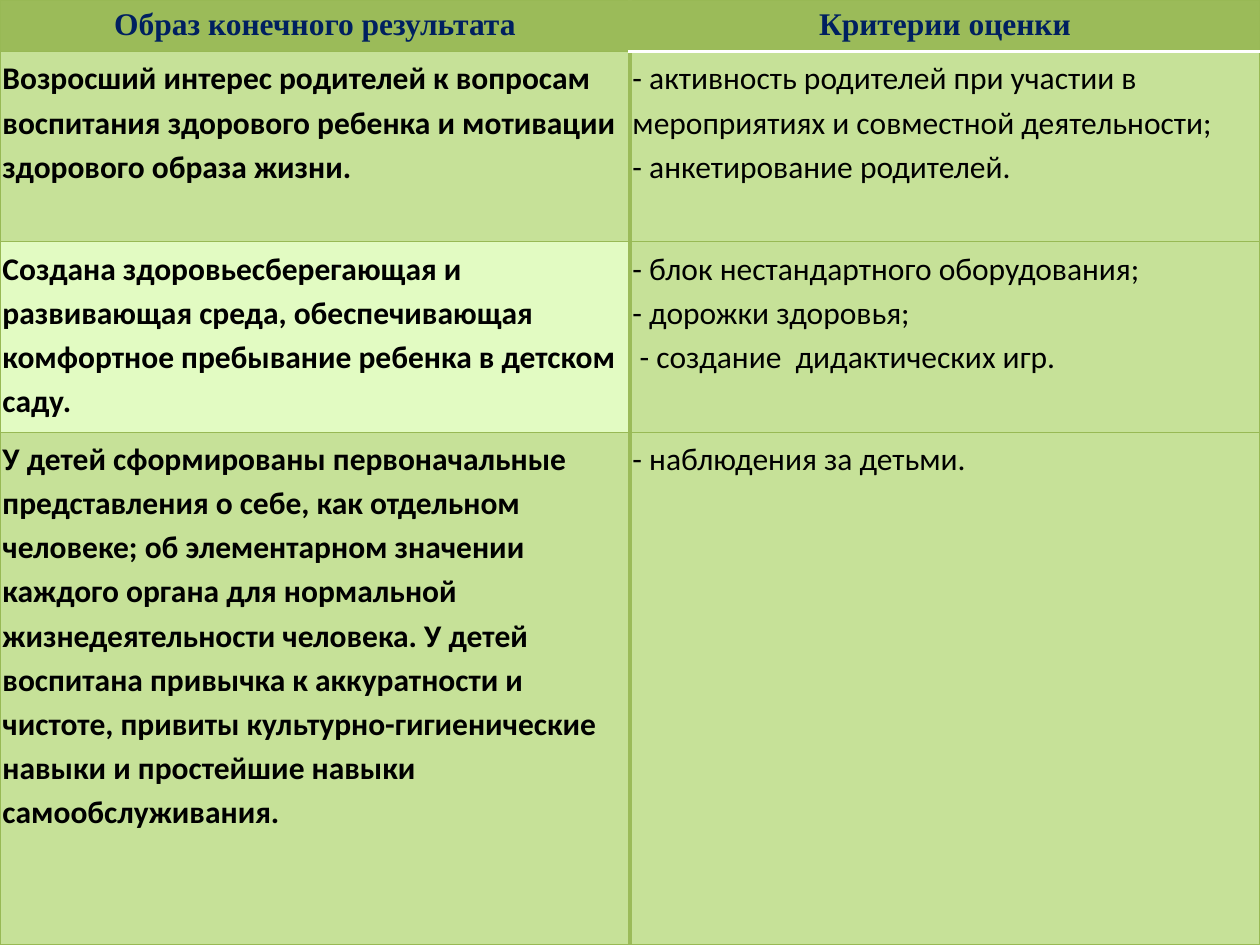
from dataclasses import dataclass

from lxml.etree import SubElement
from pptx import Presentation
from pptx.dml.color import RGBColor
from pptx.enum.text import PP_ALIGN
from pptx.oxml.ns import qn
from pptx.table import _Cell
from pptx.util import Inches, Pt

COLORS = {
    "header": "9BBB59",
    "body": "C6E198",
    "light": "E2FBC2",
    "grid": "98B955",
    "white": "FFFFFF",
    "title": "002060",
    "text": "000000",
}
SLIDE_WIDTH, SLIDE_HEIGHT = 10, 7.5
ROW_HEIGHTS = (0.41, 1.51, 1.51, 4.07)
CELL_MARGIN = Inches(0.02)
THIN, THICK = 0.75, 2


@dataclass(frozen=True)
class CellStyle:
    font: str
    color: str
    bold: bool
    align: PP_ALIGN


HEADER = CellStyle("Times New Roman", "title", True, PP_ALIGN.CENTER)
RESULT = CellStyle("Calibri", "text", True, PP_ALIGN.LEFT)
CRITERIA = CellStyle("Calibri", "text", False, PP_ALIGN.LEFT)


@dataclass(frozen=True)
class Goal:
    result: str
    criteria: tuple[str, ...]
    fill: str = "body"


HEADINGS = ("Образ конечного результата", "Критерии оценки")
GOALS = (
    Goal(
        "Возросший интерес родителей к вопросам воспитания здорового ребенка "
        "и мотивации здорового образа жизни.",
        (
            "- активность родителей при участии в мероприятиях и совместной деятельности;",
            "- анкетирование родителей.",
        ),
    ),
    Goal(
        "Создана здоровьесберегающая и развивающая среда, обеспечивающая "
        "комфортное пребывание ребенка в детском саду.",
        (
            "- блок нестандартного оборудования;",
            "- дорожки здоровья;",
            " - создание  дидактических игр.",
        ),
        "light",
    ),
    Goal(
        "У детей сформированы первоначальные представления о себе, как отдельном "
        "человеке; об элементарном значении каждого органа для нормальной "
        "жизнедеятельности человека. У детей воспитана привычка к аккуратности и "
        "чистоте, привиты культурно-гигиенические навыки и простейшие навыки "
        "самообслуживания.",
        ("- наблюдения за детьми.",),
    ),
)


def set_borders(cell: _Cell, **special: tuple[str, float]) -> None:
    """Draw thin grid lines, except on the sides (L, R, T, B) given."""
    properties = cell._tc.get_or_add_tcPr()
    for position, side in enumerate("LRTB"):
        color, width = special.get(side, ("grid", THIN))
        line = SubElement(properties, qn(f"a:ln{side}"), w=str(Pt(width)))
        solid = SubElement(line, qn("a:solidFill"))
        SubElement(solid, qn("a:srgbClr"), val=COLORS[color])
        properties.insert(position, line)


def fill_cell(cell: _Cell, lines: tuple[str, ...], style: CellStyle, fill: str) -> None:
    cell.fill.solid()
    cell.fill.fore_color.rgb = RGBColor.from_string(COLORS[fill])
    cell.margin_left = cell.margin_right = CELL_MARGIN
    cell.margin_top = cell.margin_bottom = CELL_MARGIN
    cell.text = "\n".join(lines)
    for paragraph in cell.text_frame.paragraphs:
        paragraph.alignment = style.align
        paragraph.line_spacing = 1.15
        paragraph.font.name = style.font
        paragraph.font.size = Pt(18)
        paragraph.font.bold = style.bold
        paragraph.font.color.rgb = RGBColor.from_string(COLORS[style.color])


def main() -> None:
    presentation = Presentation()
    presentation.slide_width = Inches(SLIDE_WIDTH)
    presentation.slide_height = Inches(SLIDE_HEIGHT)
    slide = presentation.slides.add_slide(presentation.slide_layouts[6])

    # Table covering the whole slide
    goals_table = slide.shapes.add_table(
        len(ROW_HEIGHTS), len(HEADINGS), 0, 0,
        presentation.slide_width, presentation.slide_height,
    ).table
    for row, height in zip(goals_table.rows, ROW_HEIGHTS):
        row.height = Inches(height)

    # Header row
    divider = ("header", THICK)
    underline = ("white", THICK)
    for column, heading in enumerate(HEADINGS):
        fill_cell(goals_table.cell(0, column), (heading,), HEADER, "header")
    set_borders(goals_table.cell(0, 0), R=divider)
    set_borders(goals_table.cell(0, 1), L=divider, B=underline)

    # Results and their criteria
    for row, goal in enumerate(GOALS, start=1):
        result, criteria = goals_table.cell(row, 0), goals_table.cell(row, 1)
        fill_cell(result, (goal.result,), RESULT, goal.fill)
        set_borders(result, R=divider)
        fill_cell(criteria, goal.criteria, CRITERIA, "body")
        top = {"T": underline} if row == 1 else {}
        set_borders(criteria, L=divider, **top)

    presentation.save("out.pptx")


if __name__ == "__main__":
    main()
